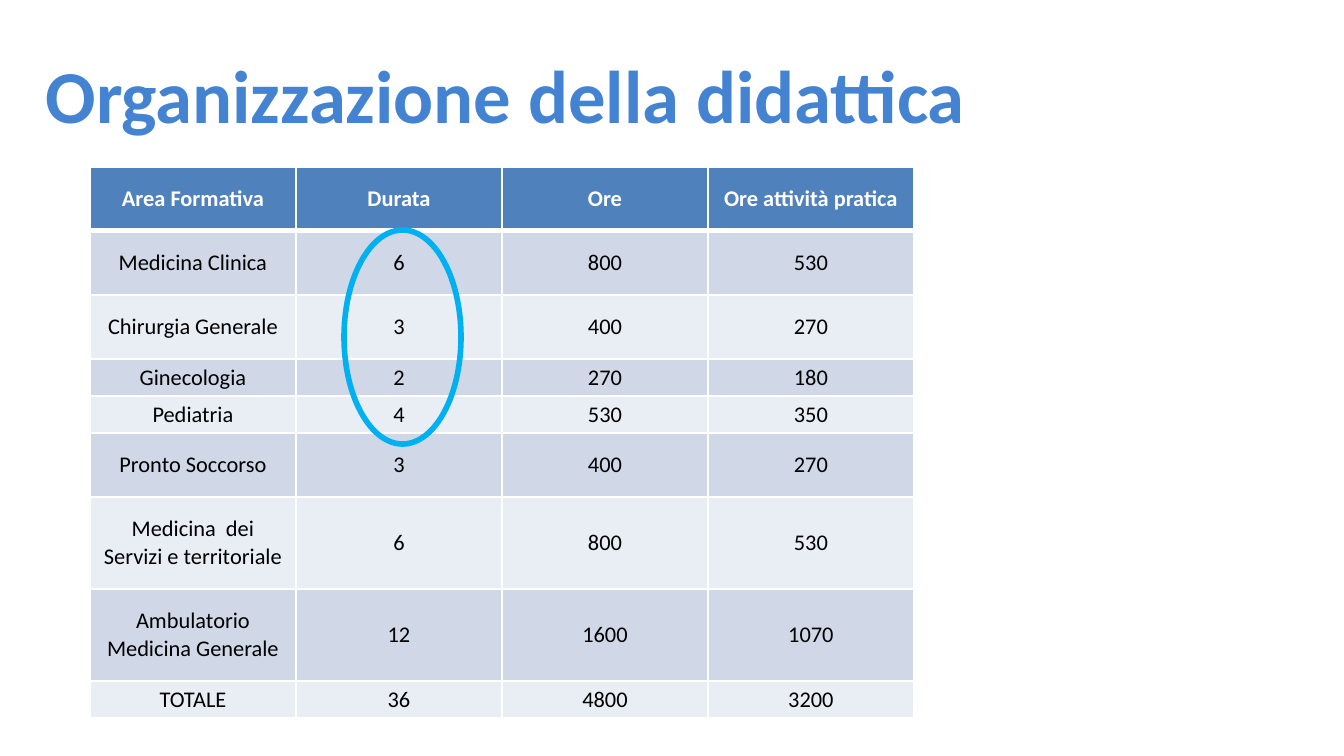
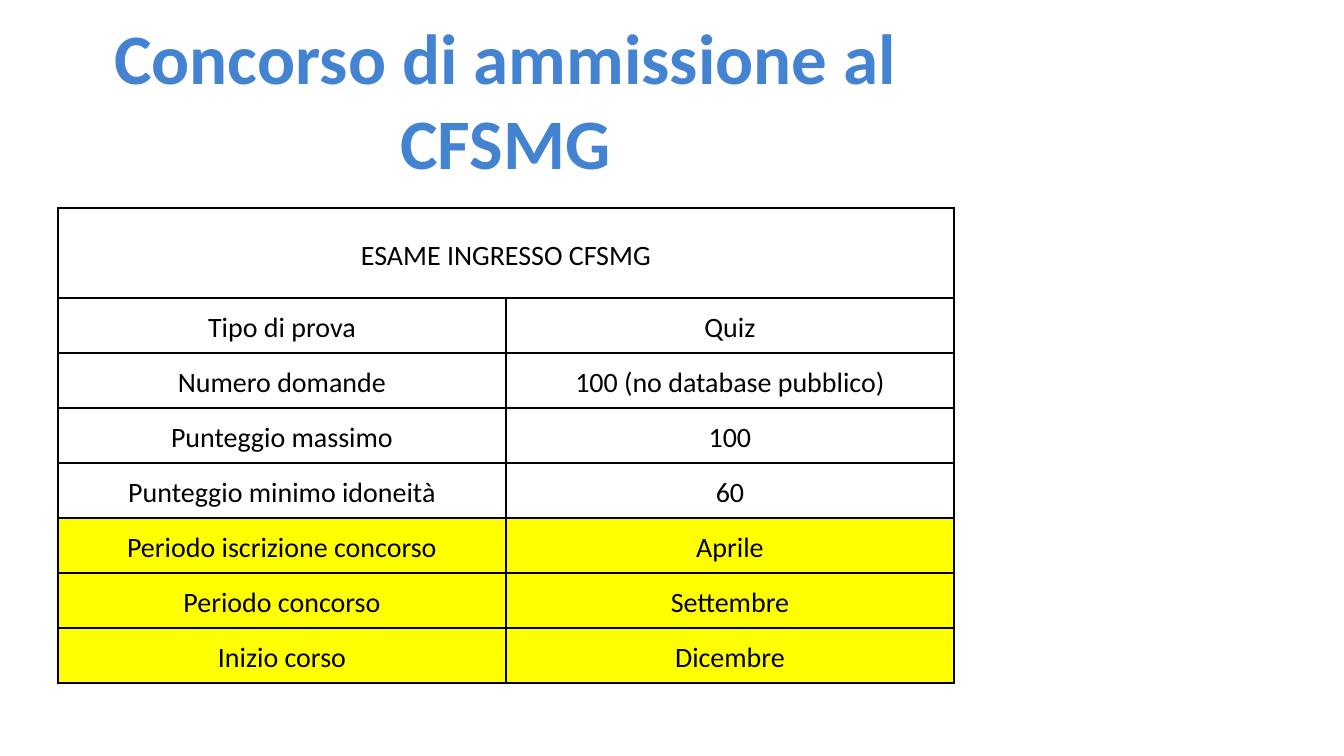
"""Builds two slides on the teaching plan and the admission exam of the course."""
from lxml import etree
from pptx import Presentation
from pptx.dml.color import RGBColor
from pptx.enum.shapes import MSO_SHAPE
from pptx.enum.text import MSO_ANCHOR, PP_ALIGN
from pptx.oxml.ns import qn
from pptx.util import Pt

PX = 6804
FONT = "Calibri"
CENTER = PP_ALIGN.CENTER
MIDDLE = MSO_ANCHOR.MIDDLE
ELLIPSE = MSO_SHAPE.OVAL
COLORS = {
    "title": "4383D1",
    "header": "4F81BD",
    "band_dark": "D0D8E8",
    "band_light": "E9EDF4",
    "ring": "00B0F0",
    "highlight": "FFFF00",
    "white": "FFFFFF",
    "black": "000000",
}


def write(frame, text, size, color, bold=False, spacing=1.0, after=0):
    """Write one centred paragraph into a text frame."""
    frame.word_wrap = True
    para = frame.paragraphs[0]
    para.alignment = CENTER
    para.line_spacing = spacing
    para.space_after = Pt(after)
    span = para.add_run()
    span.text = text
    span.font.name = FONT
    span.font.size = Pt(size)
    span.font.bold = bold
    span.font.color.rgb = RGBColor.from_string(COLORS[color])


def style_cell(cell, fill, margins, border, top=1, bottom=1):
    """Set the fill, margins and four borders of a table cell."""
    cell.vertical_anchor = MIDDLE
    cell.margin_left = cell.margin_right = margins[0] * PX
    cell.margin_top = cell.margin_bottom = margins[1] * PX
    if fill:
        cell.fill.solid()
        cell.fill.fore_color.rgb = RGBColor.from_string(COLORS[fill])
    else:
        cell.fill.background()
    properties = cell._tc.get_or_add_tcPr()
    sides = {"a:lnL": 1, "a:lnR": 1, "a:lnT": top, "a:lnB": bottom}
    for index, (tag, width) in enumerate(sides.items()):
        line = etree.Element(qn(tag), w=str(Pt(width)))
        solid = etree.SubElement(line, qn("a:solidFill"))
        etree.SubElement(solid, qn("a:srgbClr"), val=COLORS[border])
        properties.insert(index, line)


TITLES = [
    ("Organizzazione della didattica", 40, 126),
    ("Concorso di ammissione al CFSMG", 38, 136),
]
AREAS = [
    ("Area Formativa", "Durata", "Ore", "Ore attività pratica"),
    ("Medicina Clinica", "6", "800", "530"),
    ("Chirurgia Generale", "3", "400", "270"),
    ("Ginecologia", "2", "270", "180"),
    ("Pediatria", "4", "530", "350"),
    ("Pronto Soccorso", "3", "400", "270"),
    ("Medicina  dei Servizi e territoriale", "6", "800", "530"),
    ("Ambulatorio Medicina Generale", "12", "1600", "1070"),
    ("TOTALE", "36", "4800", "3200"),
]
AREA_HEIGHTS = [64, 64, 64, 37, 37, 64, 92, 92, 37]
EXAM = [
    ("ESAME INGRESSO CFSMG", ""),
    ("Tipo di prova", "Quiz"),
    ("Numero domande", "100 (no database pubblico)"),
    ("Punteggio massimo", "100"),
    ("Punteggio minimo idoneità", "60"),
    ("Periodo iscrizione concorso", "Aprile"),
    ("Periodo concorso", "Settembre"),
    ("Inizio corso", "Dicembre"),
]
EXAM_HEIGHTS = [90] + [55] * 7
FIRST_DATE_ROW = 5

deck = Presentation()
deck.slide_width = 1344 * PX
deck.slide_height = 756 * PX

pages = []
for title, size, height in TITLES:
    page = deck.slides.add_slide(deck.slide_layouts[6])
    box = page.shapes.add_textbox(0, 31 * PX, 1011 * PX, height * PX)
    box.text_frame.vertical_anchor = MIDDLE
    write(box.text_frame, title, size=size, color="title", bold=True)
    pages.append(page)

tables = []
for page, rows, heights, left, top, column_width in [
    (pages[0], AREAS, AREA_HEIGHTS, 90, 167, 206),
    (pages[1], EXAM, EXAM_HEIGHTS, 58, 208, 448),
]:
    columns = len(rows[0])
    table = page.shapes.add_table(
        len(rows), columns, left * PX, top * PX,
        columns * column_width * PX, sum(heights) * PX).table
    table.first_row = False
    table.horz_banding = False
    for column in table.columns:
        column.width = column_width * PX
    for row, height in zip(table.rows, heights):
        row.height = height * PX
    tables.append(table)
area_table, exam_table = tables

for r, row in enumerate(AREAS):
    header = r == 0
    fill = "header" if header else ("band_light", "band_dark")[r % 2]
    for c, text in enumerate(row):
        cell = area_table.cell(r, c)
        style_cell(cell, fill, margins=(13, 5), border="white",
                   top=3 if r == 1 else 1, bottom=3 if header else 1)
        write(cell.text_frame, text, size=12, bold=header,
              color="white" if header else "black")

ring = pages[0].shapes.add_shape(ELLIPSE, 344 * PX, 230 * PX, 117 * PX, 214 * PX)
ring.shadow.inherit = False
ring.fill.background()
ring.line.color.rgb = RGBColor.from_string(COLORS["ring"])
ring.line.width = Pt(3)

exam_table.cell(0, 0).merge(exam_table.cell(0, 1))
for r, row in enumerate(EXAM):
    dated = r >= FIRST_DATE_ROW
    for c, text in enumerate(row):
        cell = exam_table.cell(r, c)
        style_cell(cell, "highlight" if dated else None,
                   margins=(12, 4), border="black")
        if text:
            write(cell.text_frame, text, size=15, color="black", spacing=1.15,
                  after=0 if dated and c == 1 else 10)

deck.save("out.pptx")
